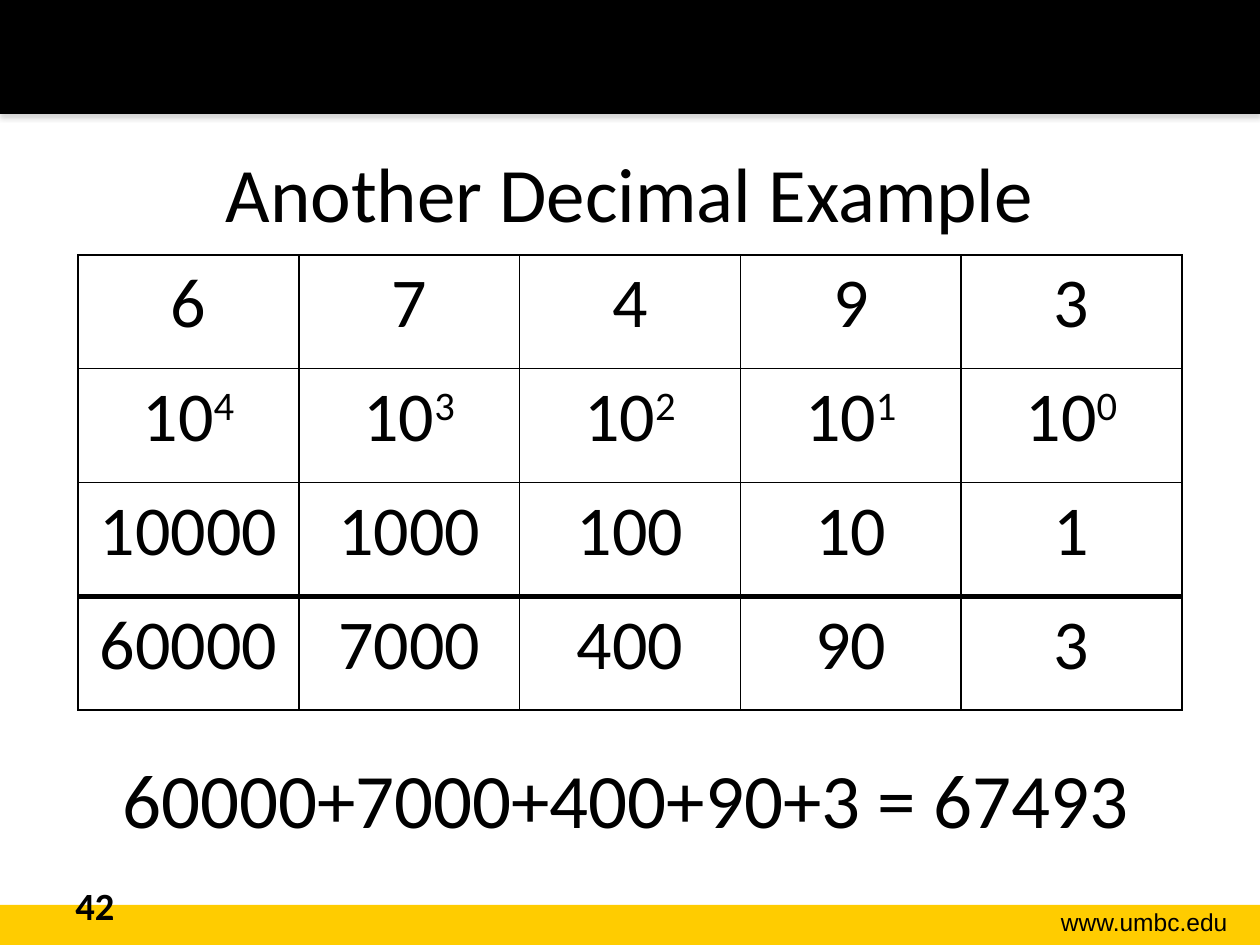
"""Build a slide that expands a decimal number by place value."""
from dataclasses import dataclass

import lxml.etree
import pptx
import pptx.dml.color
import pptx.enum.shapes
import pptx.enum.text
import pptx.oxml.ns
import pptx.util

PX_PER_INCH = 126
BLACK = "000000"
GOLD = "FFCC00"
DIGITS = "67493"
ALIGN = pptx.enum.text.PP_ALIGN


@dataclass(frozen=True)
class Box:
    left: int
    top: int
    width: int
    height: int


@dataclass(frozen=True)
class Label:
    text: str
    box: Box
    size: int
    font: str = "Calibri"
    bold: bool = False
    align: ALIGN = ALIGN.LEFT
    wrap: bool = True


def px(length: int) -> pptx.util.Emu:
    return pptx.util.Emu(round(length * 914400 / PX_PER_INCH))


def frame(box: Box) -> list[pptx.util.Emu]:
    return [px(side) for side in (box.left, box.top, box.width, box.height)]


def rgb(colour: str) -> pptx.dml.color.RGBColor:
    return pptx.dml.color.RGBColor.from_string(colour)


def child(parent, tag: str, **attributes: str):
    return lxml.etree.SubElement(parent, pptx.oxml.ns.qn(tag), **attributes)


def add_run(paragraph, text: str, size: int, font: str = "Calibri", bold: bool = False):
    run = paragraph.add_run()
    run.text = text
    run.font.size = pptx.util.Pt(size)
    run.font.name = font
    run.font.bold = bold
    run.font.color.rgb = rgb(BLACK)
    return run


def add_band(slide, box: Box, colour: str):
    band = slide.shapes.add_shape(pptx.enum.shapes.MSO_SHAPE.RECTANGLE, *frame(box))
    band.shadow.inherit = False
    band.fill.solid()
    band.fill.fore_color.rgb = rgb(colour)
    band.line.fill.background()
    return band


def cast_shadow(band) -> None:
    effects = band.element.spPr.find(pptx.oxml.ns.qn("a:effectLst"))
    shadow = child(effects, "a:outerShdw", blurRad=str(pptx.util.Pt(3.1)),
                   dist=str(pptx.util.Pt(1.8)), dir="5400000", rotWithShape="0")
    child(child(shadow, "a:srgbClr", val="808080"), "a:alpha", val="35000")


def add_label(slide, label: Label) -> None:
    text_frame = slide.shapes.add_textbox(*frame(label.box)).text_frame
    text_frame.word_wrap = label.wrap
    paragraph = text_frame.paragraphs[0]
    paragraph.alignment = label.align
    add_run(paragraph, label.text, label.size, label.font, label.bold)


def add_title(slide, text: str, box: Box) -> None:
    title = slide.shapes.title
    title.left, title.top, title.width, title.height = frame(box)
    title.text_frame.vertical_anchor = pptx.enum.text.MSO_ANCHOR.MIDDLE
    paragraph = title.text_frame.paragraphs[0]
    paragraph.alignment = ALIGN.CENTER
    add_run(paragraph, text, 44)


def set_borders(cell, top: int, bottom: int) -> None:
    properties = cell._tc.get_or_add_tcPr()
    for position, (side, width) in enumerate((("L", 1), ("R", 1), ("T", top), ("B", bottom))):
        border = lxml.etree.Element(pptx.oxml.ns.qn(f"a:ln{side}"), w=str(pptx.util.Pt(width)))
        child(child(border, "a:solidFill"), "a:srgbClr", val=BLACK)
        properties.insert(position, border)


def add_place_values(slide, box: Box) -> None:
    powers = range(len(DIGITS) - 1, -1, -1)
    rows = [
        [(digit, "") for digit in DIGITS],
        [("10", str(power)) for power in powers],
        [(str(10 ** power), "") for power in powers],
        [(str(int(digit) * 10 ** power), "") for digit, power in zip(DIGITS, powers)],
    ]
    last = len(rows) - 1
    table = slide.shapes.add_table(len(rows), len(DIGITS), *frame(box)).table
    table.first_row = table.horz_banding = False
    for row_index, row in enumerate(rows):
        for column_index, (base, exponent) in enumerate(row):
            cell = table.cell(row_index, column_index)
            cell.fill.background()
            set_borders(cell, 3 if row_index == last else 1, 3 if row_index == last - 1 else 1)
            paragraph = cell.text_frame.paragraphs[0]
            paragraph.alignment = ALIGN.CENTER
            add_run(paragraph, base, 40)
            if exponent:
                raised = add_run(paragraph, exponent, 40)
                raised.font._element.set("baseline", "30000")


def main() -> None:
    presentation = pptx.Presentation()
    presentation.slide_width, presentation.slide_height = px(1260), px(945)
    slide = presentation.slides.add_slide(presentation.slide_layouts[5])
    add_band(slide, Box(0, 905, 1260, 40), GOLD)
    cast_shadow(add_band(slide, Box(0, 0, 1260, 114), BLACK))
    add_label(slide, Label("www.umbc.edu", Box(989, 901, 251, 43), 14, "Arial", align=ALIGN.RIGHT))
    add_title(slide, "Another Decimal Example", Box(63, 113, 1134, 158))
    add_label(slide, Label("42", Box(63, 876, 294, 50), 22, bold=True))
    add_place_values(slide, Box(78, 255, 1104, 455))
    add_label(slide, Label("60000+7000+400+90+3 = 67493", Box(110, 745, 1041, 106), 44, wrap=False))
    presentation.save("out.pptx")


if __name__ == "__main__":
    main()
